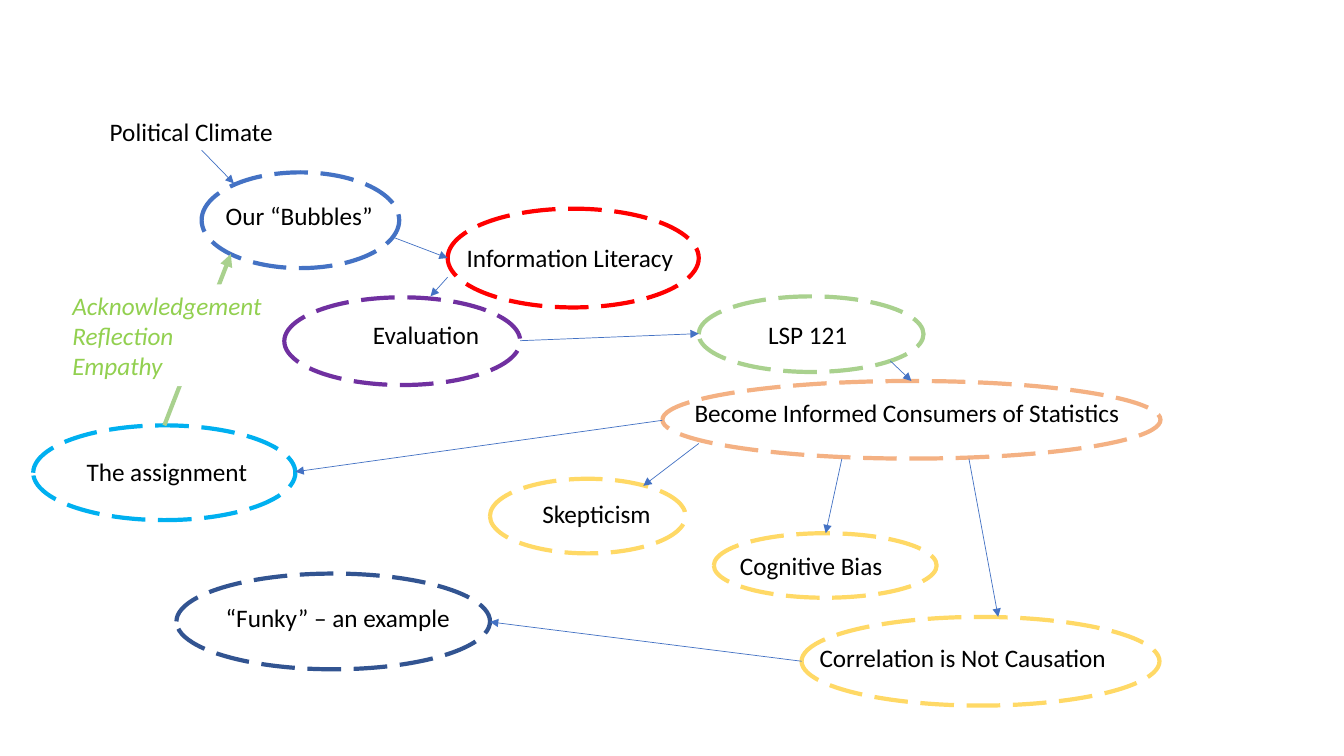
from dataclasses import dataclass
from typing import NamedTuple

from lxml.etree import SubElement
from pptx import Presentation
from pptx.dml.color import RGBColor
from pptx.enum.dml import MSO_LINE
from pptx.enum.shapes import MSO_CONNECTOR, MSO_SHAPE
from pptx.enum.text import MSO_AUTO_SIZE, PP_ALIGN
from pptx.oxml.ns import qn
from pptx.util import Pt

EMU_PER_PX = 9144


class Box(NamedTuple):
    left: int
    top: int
    width: int
    height: int

    def inner(self, dx, dy, width, height):
        return Box(self.left + dx, self.top + dy, width, height)


@dataclass(frozen=True)
class Theme:
    font: str = "Calibri"
    text_size: int = 18
    outline: int = 3
    thin: float = 0.5
    text: str = "000000"
    paper: str = "FFFFFF"
    blue: str = "4472C4"
    red: str = "FF0000"
    purple: str = "7030A0"
    green: str = "A9D18E"
    lime: str = "92D050"
    orange: str = "F4B183"
    yellow: str = "FFD966"
    navy: str = "325491"
    cyan: str = "00B0F0"


THEME = Theme()

BUBBLES = [
    ("Our “Bubbles”", (200, 171, 196, 95), THEME.blue, (14, 23, 167)),
    ("Information Literacy", (444, 207, 249, 98), THEME.red, (9, 28, 227)),
    ("Evaluation", (282, 295, 234, 87), THEME.purple, (78, 17, 127)),
    ("LSP 121", (693, 294, 223, 75), THEME.green, (59, 18, 100)),
    ("Become Informed Consumers of Statistics", (657, 378, 494, 77), THEME.orange, (22, 11, 446)),
    ("Skepticism", (486, 475, 194, 74), THEME.yellow, (42, 14, 129)),
    ("Cognitive Bias", (708, 529, 221, 64), THEME.yellow, (16, 12, 163)),
    ("Correlation is Not Causation", (795, 612, 355, 88), THEME.yellow, (8, 20, 308)),
    ("“Funky” – an example", (175, 569, 311, 95), THEME.navy, (39, 24, 245)),
    ("The assignment", (33, 422, 260, 94), THEME.cyan, (43, 26, 181)),
]

ARROWS = [
    ((200, 149), (232, 182)),
    ((389, 235), (444, 256)),
    ((444, 275), (427, 294)),
    ((516, 338), (693, 331)),
    ((883, 358), (904, 378)),
    ((693, 440), (638, 482)),
    ((835, 455), (819, 529)),
    ((961, 455), (990, 612)),
    ((795, 656), (486, 617)),
    ((657, 417), (293, 468)),
]


def px(*lengths):
    return [length * EMU_PER_PX for length in lengths]


def rgb(value):
    return RGBColor.from_string(value)


def write(sp, text, color, italic=False):
    tf = sp.text_frame
    tf.text = text
    tf.word_wrap = False
    tf.auto_size = MSO_AUTO_SIZE.SHAPE_TO_FIT_TEXT
    for p in tf.paragraphs:
        p.alignment = PP_ALIGN.LEFT
        for r in p.runs:
            r.font.name = THEME.font
            r.font.size = Pt(THEME.text_size)
            r.font.italic = italic
            r.font.color.rgb = rgb(color)


def add_label(s, box, text):
    write(s.shapes.add_textbox(*px(*box)), text, THEME.text)


def add_bubble(s, box, text, color, label):
    sp = s.shapes.add_shape(MSO_SHAPE.OVAL, *px(*box))
    sp.shadow.inherit = False
    sp.fill.background()
    sp.line.color.rgb = rgb(color)
    sp.line.width = Pt(THEME.outline)
    sp.line.dash_style = MSO_LINE.LONG_DASH
    dx, dy, width = label
    add_label(s, box.inner(dx, dy, width, 40), text)


def add_arrow(s, box, start, end, color=THEME.blue, width=THEME.thin):
    (x1, y1), (x2, y2) = start, end
    ends = px(box.left + x1, box.top + y1, box.left + x2, box.top + y2)
    cxn = s.shapes.add_connector(MSO_CONNECTOR.STRAIGHT, *ends)
    cxn.line.color.rgb = rgb(color)
    cxn.line.width = Pt(width)
    SubElement(cxn.line._get_or_add_ln(), qn("a:tailEnd"), type="triangle")
    SubElement(cxn._element.spPr, qn("a:effectLst"))


def add_feedback(s, box):
    add_arrow(s, box, (101, 170), (167, 0), THEME.green, THEME.outline)
    sp = s.shapes.add_shape(MSO_SHAPE.RECTANGLE, *px(*box.inner(0, 30, 210, 101)))
    sp.shadow.inherit = False
    sp.fill.solid()
    sp.fill.fore_color.rgb = rgb(THEME.paper)
    sp.line.fill.background()
    write(sp, "Acknowledgement\nReflection\nEmpathy", THEME.lime, italic=True)


def build_concept_map(s, box):
    add_label(s, box.inner(99, 111, 184, 40), "Political Climate")
    for text, place, color, label in BUBBLES:
        add_bubble(s, box.inner(*place), text, color, label)
    for start, end in ARROWS:
        add_arrow(s, box, start, end)
    add_feedback(s, box.inner(62, 252, 210, 170))


def main():
    prs = Presentation()
    page = Box(0, 0, 1333, 750)
    prs.slide_width, prs.slide_height = px(page.width, page.height)
    s = prs.slides.add_slide(prs.slide_layouts[6])
    build_concept_map(s, page)
    prs.save("out.pptx")


if __name__ == "__main__":
    main()
